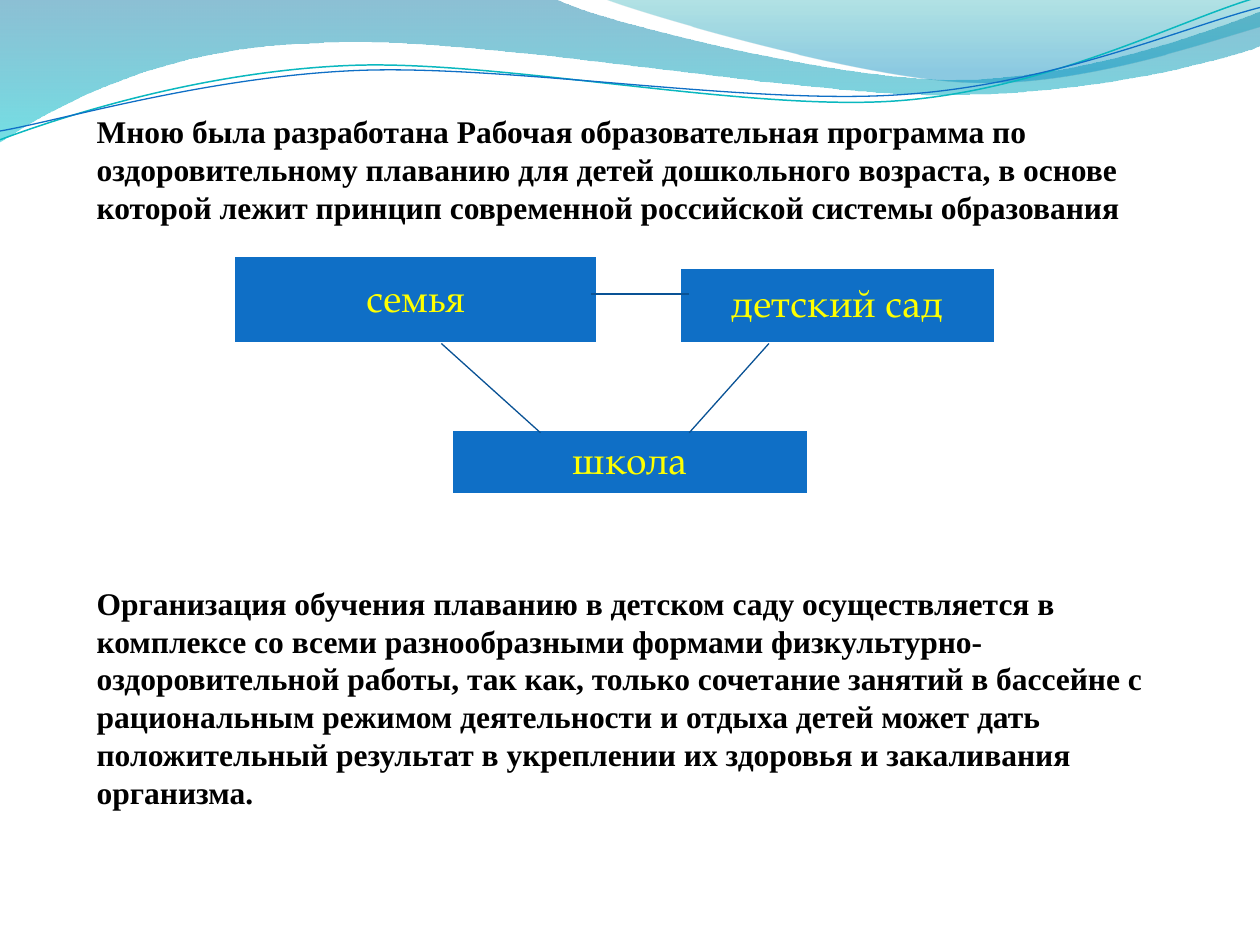
"""Build the slide on family, kindergarten and school in a swimming programme."""
import math

from lxml import etree
from pptx import Presentation
from pptx import util as u
from pptx.dml.color import RGBColor
from pptx.enum import shapes, text
from pptx.oxml.ns import qn

WHITE = RGBColor(0xFF, 0xFF, 0xFF)
BLACK = RGBColor(0x00, 0x00, 0x00)
BLUE = RGBColor(0x0F, 0x6F, 0xC6)
NAVY = RGBColor(0x09, 0x52, 0x95)
YELLOW = RGBColor(0xFF, 0xFF, 0x00)
TEAL = RGBColor(0x0A, 0xB8, 0xBF)
DEEP_SEA = RGBColor(0x00, 0x74, 0xA1)
AQUA = RGBColor(0x00, 0xC6, 0xCF)
LAGOON = RGBColor(0x00, 0xA1, 0xA9)
SKY = RGBColor(0x00, 0x8B, 0xBF)
COLUMNS, ROWS = 100, 75
TILT = 357.3

PROGRAMME = ("Мною была разработана Рабочая образовательная программа по оздоровительному "
             "плаванию для детей дошкольного возраста, в основе которой лежит принцип "
             "современной российской системы образования")
TRAINING = ("Организация обучения плаванию в детском саду осуществляется в комплексе со всеми "
            "разнообразными формами физкультурно-оздоровительной работы, так как, только "
            "сочетание занятий в бассейне с рациональным режимом деятельности и отдыха детей "
            "может дать положительный результат в укреплении их здоровья и закаливания организма.")

WIDE_WAVE = [[(0, 0)], [(44, -0.1)],
             [(47.6, 1.7), (66.4, 6.3), (75.8, 6.3)], [(85.3, 6.3), (95.8, 2.6), (100, 0.9)],
             [(100.1, 3.6)], [(98.3, 4.4), (87, 7.6), (74.6, 7.5)],
             [(62.2, 7.5), (38.2, 2.8), (25.7, 3.4)], [(12.9, 3.6), (4.6, 8.3), (-0.1, 11.3)]]
RIGHT_WAVE = [[(47.9, -0.1)], [(50.9, 1.1), (68.2, 6.2), (76.9, 6.5)],
              [(85.6, 6.9), (96.1, 3.2), (100, 2.1)], [(100, 0)]]
TEAL_WAVE = [[(0, 11.1)], [(4.8, 9.3), (15.8, 5.7), (27.7, 5.2)],
             [(39.5, 4.7), (59.3, 8.9), (71.3, 8)], [(83.3, 7.1), (93.8, 1.5), (99.8, -0.2)]]
BLUE_WAVE = [[(0, 10.4)], [(4.7, 9.6), (16.4, 6.1), (28.3, 5.6)],
             [(40.3, 5.1), (59.7, 8.4), (71.7, 7.5)], [(83.6, 6.7), (94.1, 2.1), (100, 0.6)]]


def write(para, words, *, font, size, color, bold=False, align=None, spacing=None, before=0):
    """Put formatted words into a paragraph."""
    para.alignment = align
    para.line_spacing = spacing
    para.space_before = u.Pt(before)
    span = para.add_run()
    span.text = words
    span.font.name, span.font.size, span.font.bold = font, u.Pt(size), bold
    span.font.color.rgb = color


def turn(x, y, degrees):
    """Turn a point clockwise about the slide's corner."""
    angle = math.radians(degrees)
    return (round(x * math.cos(angle) - y * math.sin(angle)),
            round(x * math.sin(angle) + y * math.cos(angle)))


class Board:
    """Hold the style and the current slide."""

    body_style = dict(font="Times New Roman", size=18, color=BLACK, bold=True, spacing=u.Pt(21.6))
    box_style = dict(font="TeX Gyre Pagella", size=22, color=YELLOW, spacing=0.9,
                     align=text.PP_ALIGN.CENTER)

    def __init__(self, deck):
        """Start a slide that keeps only its body placeholder."""
        self.column = deck.slide_width / COLUMNS
        self.row = deck.slide_height / ROWS
        self.page = deck.slides.add_slide(deck.slide_layouts[1])
        title = self.page.shapes.title.element
        title.getparent().remove(title)

    def place(self, *cells):
        """Convert alternating columns and rows to lengths."""
        return [round(cell * (self.row if index % 2 else self.column))
                for index, cell in enumerate(cells)]

    def outline(self, segments, close, tilt=0):
        """Draw a freeform of straight and cubic segments."""
        start, *rest = [turn(*self.place(*point), -tilt)
                        for segment in segments for point in segment]
        builder = self.page.shapes.build_freeform(*start)
        builder.add_line_segments(rest, close=close)
        shape = builder.convert_to_shape()
        shape.shadow.inherit = False
        corners = iter(list(shape.element.iter(qn("a:lnTo"))))
        for segment in segments[1:]:
            first, *others = [next(corners) for _ in segment]
            if others:
                first.tag = qn("a:cubicBezTo")
                for corner in others:
                    first.append(corner[0])
                    corner.getparent().remove(corner)
        middle = turn(shape.left + shape.width / 2, shape.top + shape.height / 2, tilt)
        shape.left = round(middle[0] - shape.width / 2)
        shape.top = round(middle[1] - shape.height / 2)
        shape.rotation = tilt
        return shape

    def wave(self, segments, stops):
        """Draw a wave with a translucent gradient from top to bottom."""
        shape = self.outline(segments, True)
        shape.line.fill.background()
        shape.fill.gradient()
        shape.fill.gradient_angle = 270
        for stop, (position, color, _) in zip(shape.fill.gradient_stops, stops):
            stop.position, stop.color.rgb = position, color
        for tint, (_, _, opacity) in zip(shape.element.iter(qn("a:srgbClr")), stops):
            etree.SubElement(tint, qn("a:alpha")).set("val", str(opacity * 1000))

    def ripple(self, segments, color, width):
        """Draw a thin open curve."""
        shape = self.outline(segments, False, TILT)
        shape.fill.background()
        shape.line.color.rgb, shape.line.width = color, u.Pt(width)

    def body(self, cells, paragraphs):
        """Fill the body placeholder and bring it to the front."""
        box = self.page.placeholders[1]
        box.left, box.top, box.width, box.height = self.place(*cells)
        frame = box.text_frame
        frame.auto_size = text.MSO_AUTO_SIZE.NONE
        frame.vertical_anchor = text.MSO_ANCHOR.TOP
        for index, (words, before) in enumerate(paragraphs):
            para = frame.add_paragraph() if index else frame.paragraphs[0]
            write(para, words, before=before, **self.body_style)
            properties = para._p.get_or_add_pPr()
            properties.set("marL", "0")
            properties.set("indent", "0")
            etree.SubElement(properties, qn("a:buNone"))
        box.element.getparent().append(box.element)

    def box(self, cells, words):
        """Draw a labelled rectangle."""
        shape = self.page.shapes.add_shape(shapes.MSO_SHAPE.RECTANGLE, *self.place(*cells))
        shape.shadow.inherit = False
        shape.fill.solid()
        shape.fill.fore_color.rgb = BLUE
        shape.line.color.rgb, shape.line.width = WHITE, u.Pt(2)
        frame = shape.text_frame
        frame.word_wrap = True
        frame.vertical_anchor = text.MSO_ANCHOR.MIDDLE
        write(frame.paragraphs[0], words, **self.box_style)

    def link(self, cells):
        """Draw a line between two boxes."""
        line = self.page.shapes.add_connector(shapes.MSO_CONNECTOR.STRAIGHT, *self.place(*cells))
        line.line.color.rgb, line.line.width = NAVY, u.Pt(0.75)
        etree.SubElement(line.element.spPr, qn("a:effectLst"))


def main():
    """Build and save the deck."""
    deck = Presentation()
    deck.slide_width, deck.slide_height = u.Inches(10), u.Inches(7.5)
    board = Board(deck)
    board.wave(WIDE_WAVE, [(0, DEEP_SEA, 45), (1, AQUA, 55)])
    board.wave(RIGHT_WAVE, [(0, LAGOON, 30), (0.8, SKY, 45)])
    board.ripple(TEAL_WAVE, TEAL, 0.85)
    board.ripple(BLUE_WAVE, BLUE, 0.75)
    board.body((6.67, 8.38, 89, 61.4), [(PROGRAMME, 0), (TRAINING, 204.8)])
    for cells, words in [((18.53, 20.3, 28.94, 7), "семья"),
                         ((53.9, 21.22, 25.1, 6.03), "детский сад"),
                         ((35.83, 34.05, 28.33, 5.2), "школа")]:
        board.box(cells, words)
    for cells in [(35.03, 27.26, 42.9, 34.35), (61.03, 27.26, 54.7, 34.35),
                  (46.9, 23.34, 54.7, 23.34)]:
        board.link(cells)
    deck.save("out.pptx")


if __name__ == "__main__":
    main()
